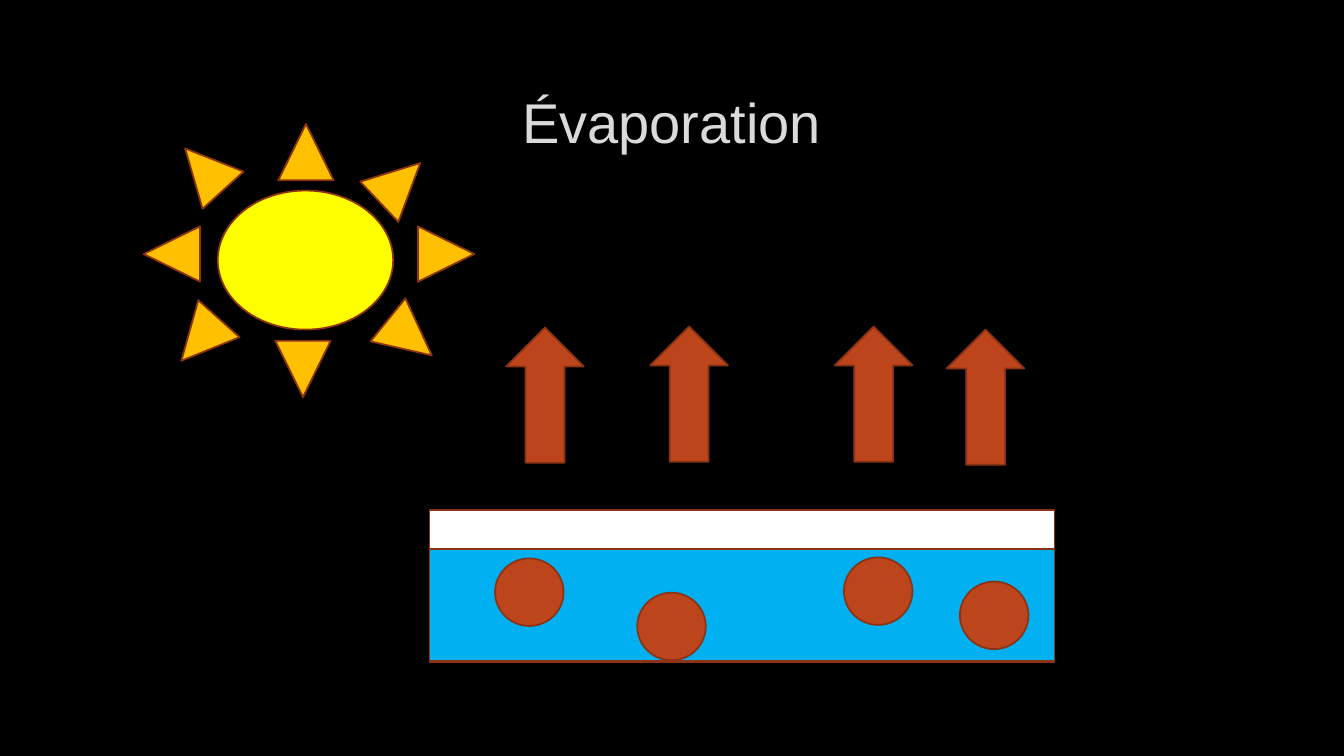
from pptx import Presentation
from pptx.dml.color import RGBColor
from pptx.enum import shapes, text
from pptx.util import Inches, Pt

TITLE = "Évaporation"
TITLE_BOX = (1, 0.67, 11.32, 1.06)

SUN_DISC = (2.16, 1.89, 1.74, 1.38)
RAY_SIZE = (0.55, 0.56)
SUN_RAYS = [  # left, top, rotation
    (2.76, 1.23, 0),
    (4.15, 2.24, 90),
    (1.75, 1.4, 317.8),
    (1.43, 2.24, 270),
    (3.69, 1.53, 46.6),
    (3.79, 3.07, 129.1),
    (2.73, 3.38, 180),
    (1.71, 3.09, 221.8),
]

BASIN = (4.26, 5.06, 6.2, 1.51)
WATER = (4.26, 5.45, 6.2, 1.11)

VAPOUR_SIZE = (0.77, 1.34)
VAPOUR_ARROWS = [(5.02, 3.25), (6.45, 3.24), (8.28, 3.24), (9.39, 3.27)]

MOLECULE_SIZE = (0.68, 0.67)
MOLECULES = [(4.91, 5.54), (6.32, 5.88), (8.37, 5.53), (9.52, 5.77)]

THEME = {
    "font": "Arial",
    "title_size": 40,
    "title": "DADADA",
    "background": "000000",
    "outline": "8B3314",
    "outline_width": 1.25,
    "sun": "FFFF00",
    "ray": "FFC000",
    "basin": "FFFFFF",
    "water": "00B0F0",
    "vapour": "BC451B",
}


def color(role):
    return RGBColor.from_string(THEME[role])


def add_figure(slide, preset, box, role, rotation=0):
    """Draw an outlined preset shape filled with the theme colour of its role."""
    figure = slide.shapes.add_shape(preset, *map(Inches, box))
    figure.shadow.inherit = False
    figure.rotation = rotation
    figure.fill.solid()
    figure.fill.fore_color.rgb = color(role)
    figure.line.color.rgb = color("outline")
    figure.line.width = Pt(THEME["outline_width"])


def add_title(slide):
    frame = slide.shapes.add_textbox(*map(Inches, TITLE_BOX)).text_frame
    frame.word_wrap = True
    frame.vertical_anchor = text.MSO_ANCHOR.MIDDLE
    heading = frame.paragraphs[0]
    heading.text = TITLE
    heading.alignment = text.PP_ALIGN.CENTER
    heading.font.name = THEME["font"]
    heading.font.size = Pt(THEME["title_size"])
    heading.font.color.rgb = color("title")


def main():
    deck = Presentation()
    deck.slide_width, deck.slide_height = Inches(13.33), Inches(7.5)
    slide = deck.slides.add_slide(deck.slide_layouts[6])
    slide.background.fill.solid()
    slide.background.fill.fore_color.rgb = color("background")

    preset = shapes.MSO_SHAPE
    add_title(slide)
    add_figure(slide, preset.OVAL, SUN_DISC, "sun")
    for left, top, rotation in SUN_RAYS:
        add_figure(slide, preset.ISOSCELES_TRIANGLE, (left, top, *RAY_SIZE), "ray", rotation)
    add_figure(slide, preset.RECTANGLE, BASIN, "basin")
    for corner in VAPOUR_ARROWS:
        add_figure(slide, preset.DOWN_ARROW, corner + VAPOUR_SIZE, "vapour", 180)
    add_figure(slide, preset.RECTANGLE, WATER, "water")
    for corner in MOLECULES:
        add_figure(slide, preset.OVAL, corner + MOLECULE_SIZE, "vapour")

    deck.save("out.pptx")


if __name__ == "__main__":
    main()
